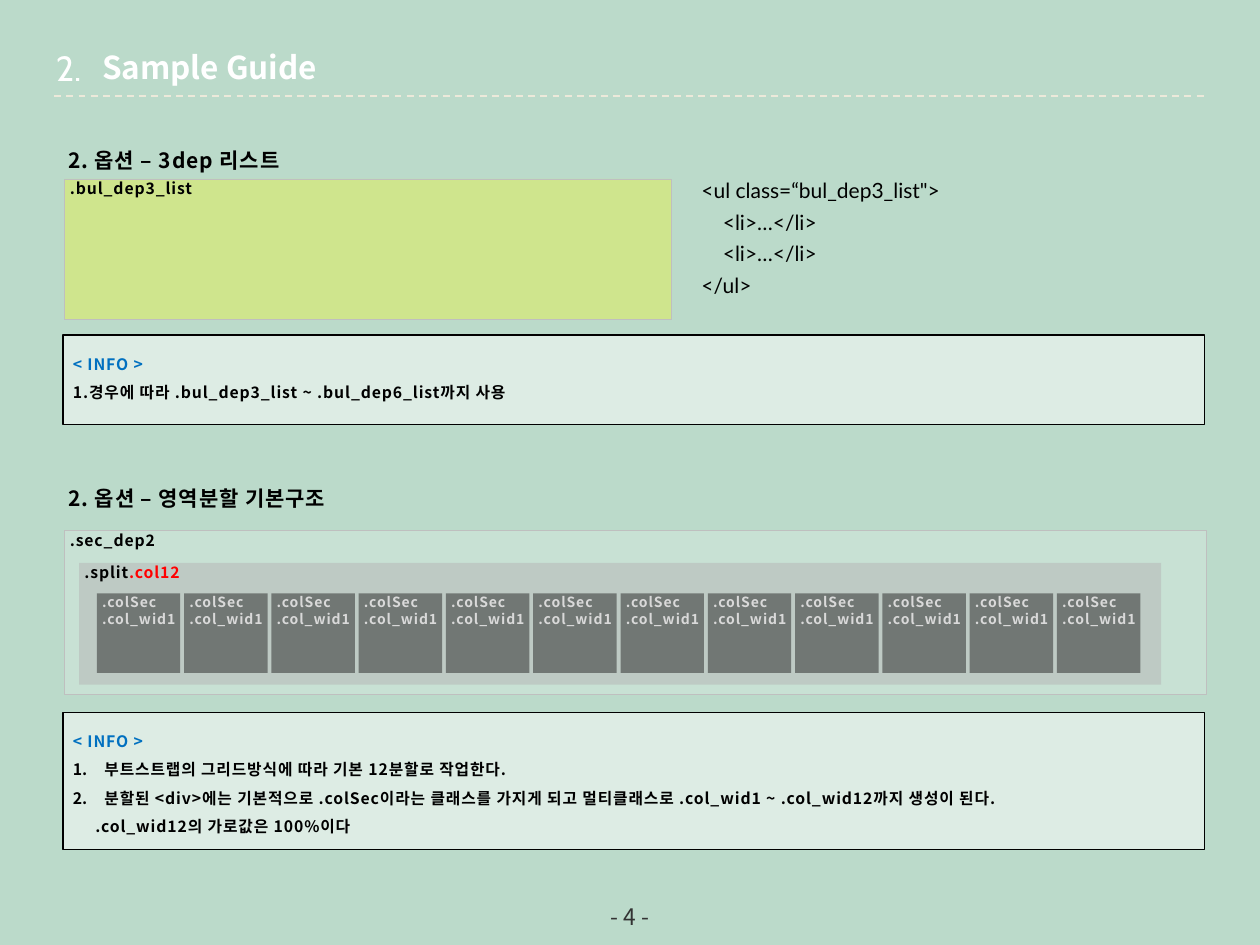
import pptx
import pptx.dml.color
import pptx.enum.dml
import pptx.enum.shapes
import pptx.enum.text
import pptx.oxml.ns
import pptx.util
from lxml import etree

Pt = pptx.util.Pt
ALIGN = pptx.enum.text.PP_ALIGN
ANCHOR = pptx.enum.text.MSO_ANCHOR
KOREAN = "Noto Sans CJK KR"
BLACK, WHITE, GRAY, BLUE, RED = "000000", "FFFFFF", "BFBFBF", "0070C0", "FF0000"
LINE_HEIGHT = 1.2  # line pitch relative to the text size
COLUMNS = 12
COLUMN_PITCH = 49.88


def rgb(color):
    return pptx.dml.color.RGBColor.from_string(color)


def sub(parent, tag, **attrs):
    return etree.SubElement(parent, pptx.oxml.ns.qn(tag), **attrs)


def add_run(p, text, size, color, font=KOREAN, bold=False, spacing=0):
    r = p.add_run()
    r.text = text
    f = r.font
    f.size, f.bold, f.name = Pt(size), bold, font
    f.color.rgb = rgb(color)
    rPr = r._r.get_or_add_rPr()
    sub(rPr, "a:ea", typeface=font)
    if spacing:
        rPr.set("spc", str(int(spacing * 100)))


def add_label(p, text, size, color, lines=1):
    """Add a bold, slightly spaced run and set the line pitch to match it."""
    p.alignment = ALIGN.LEFT
    p.line_spacing = Pt(round(size * LINE_HEIGHT * lines, 1))
    add_run(p, text, size, color, bold=True, spacing=0.5)


def indent(p, left, hanging=0, numbered=False):
    pPr = p._p.get_or_add_pPr()
    pPr.set("marL", str(Pt(left)))
    pPr.set("indent", str(Pt(-hanging)))
    if numbered:
        sub(pPr, "a:buFont", typeface="+mj-lt")
        sub(pPr, "a:buAutoNum", type="arabicPeriod")


def next_paragraph(tf):
    first = tf.paragraphs[0]
    return tf.add_paragraph() if first.runs else first


def set_insets(tf, left, top, right, bottom):
    tf.margin_left, tf.margin_top = Pt(left), Pt(top)
    tf.margin_right, tf.margin_bottom = Pt(right), Pt(bottom)


def add_panel(slide, box, fill, alpha, line=None, line_width=0.25,
              insets=(3, 0, 0, 0)):
    """Add a translucent rectangle and return its text frame."""
    sp = slide.shapes.add_shape(pptx.enum.shapes.MSO_SHAPE.RECTANGLE,
                                *map(Pt, box))
    sp.shadow.inherit = False
    sp.fill.solid()
    sp.fill.fore_color.rgb = rgb(fill)
    color = sp._element.spPr.find(".//" + pptx.oxml.ns.qn("a:srgbClr"))
    sub(color, "a:alpha", val=str(alpha * 1000))
    if line:
        sp.line.color.rgb = rgb(line)
        sp.line.width = Pt(line_width)
    else:
        sp.line.fill.background()
    tf = sp.text_frame
    tf.word_wrap = True
    tf.vertical_anchor = ANCHOR.TOP
    set_insets(tf, *insets)
    return tf


def add_text_box(slide, box, wrap=True):
    tf = slide.shapes.add_textbox(*map(Pt, box)).text_frame
    tf.word_wrap = wrap
    return tf


def add_heading(slide, box, text):
    tf = add_text_box(slide, box, wrap=False)
    tf.auto_size = pptx.enum.text.MSO_AUTO_SIZE.SHAPE_TO_FIT_TEXT
    set_insets(tf, 3, 0, 0, 0)
    add_label(tf.paragraphs[0], text, 12, BLACK, lines=1.5)


def add_info(slide, top, height):
    tf = add_panel(slide, (36, top, 652.3, height), WHITE, 50, BLACK, 0.75,
                   insets=(5.67, 5.67, 5.67, 0))
    add_label(tf.paragraphs[0], "< INFO >", 9, BLUE, lines=1.5)
    return tf


def add_info_line(tf, text, **indents):
    p = next_paragraph(tf)
    if indents:
        indent(p, **indents)
    add_label(p, text, 9, BLACK, lines=1.5)


def add_title(slide):
    sp = slide.shapes.title
    sp.left, sp.top, sp.width, sp.height = map(Pt, (51.1, 23, 331.9, 28.8))
    tf = sp.text_frame
    tf.word_wrap = True
    tf.auto_size = pptx.enum.text.MSO_AUTO_SIZE.NONE
    tf.vertical_anchor = ANCHOR.TOP
    p = tf.paragraphs[0]
    p.alignment = ALIGN.LEFT
    p.line_spacing = Pt(22.5)
    add_run(p, "Sample Guide", 18, WHITE, bold=True)

    p = add_text_box(slide, (19.4, 23, 39.6, 31.7)).paragraphs[0]
    p.alignment = ALIGN.CENTER
    add_run(p, "2.", 20, WHITE, font="Cabin")


def add_title_rule(slide):
    line = slide.shapes.add_connector(
        pptx.enum.shapes.MSO_CONNECTOR.STRAIGHT,
        Pt(31), Pt(54.7), Pt(689), Pt(54.7))
    line.line.color.rgb = rgb("ECE9DA")
    line.line.width = Pt(1)
    line.line.dash_style = pptx.enum.dml.MSO_LINE.DASH
    sub(line._element.spPr, "a:effectLst")


def add_page_number(slide):
    tf = add_text_box(slide, (276, 512.6, 168, 22.3))
    set_insets(tf, 0, 0, 0, 0)
    tf.vertical_anchor = ANCHOR.MIDDLE
    p = tf.paragraphs[0]
    p.alignment = ALIGN.CENTER
    add_run(p, "- 4 -", 13, "333333")


def add_code(slide, box, lines):
    tf = add_text_box(slide, box)
    for text in lines:
        p = next_paragraph(tf)
        p.line_spacing = Pt(18)
        add_run(p, text, 12, BLACK, font="Lato")


def add_list_section(slide):
    add_heading(slide, (36, 77, 133.9, 21.6), "2. 옵션 – 3dep 리스트")
    tf = add_panel(slide, (36.9, 102.2, 346.6, 80.2), "FFFF00", 30, GRAY)
    add_label(tf.paragraphs[0], ".bul_dep3_list", 9, BLACK)
    add_code(slide, (393.8, 94.3, 277.9, 79.9), [
        "<ul class=“bul_dep3_list\">",
        "    <li>…</li>",
        "    <li>…</li>",
        "</ul>",
    ])
    info = add_info(slide, 191.5, 51.1)
    add_info_line(info, "1.경우에 따라 .bul_dep3_list ~ .bul_dep6_list까지 사용")


def add_split_section(slide):
    add_heading(slide, (36, 270, 166.3, 21.6), "2. 옵션 – 영역분할 기본구조")
    tf = add_panel(slide, (36.9, 303.1, 652.3, 93.6), WHITE, 20, GRAY)
    add_label(tf.paragraphs[0], ".sec_dep2", 9, BLACK)
    tf = add_panel(slide, (45.2, 321.6, 618.3, 69.6), "B5B5B5", 50)
    add_label(tf.paragraphs[0], ".split", 9, BLACK)
    add_label(tf.paragraphs[0], ".col12", 9, RED)
    for i in range(COLUMNS):
        left = 55.3 + i * COLUMN_PITCH
        tf = add_panel(slide, (left, 339.1, 47.7, 45.4), "262626", 50)
        for name in (".colSec", ".col_wid1"):
            add_label(next_paragraph(tf), name, 8, "D9D9D9")
    info = add_info(slide, 407, 78.5)
    for text in (
        "부트스트랩의 그리드방식에 따라 기본 12분할로 작업한다.",
        "분할된 <div>에는 기본적으로 .colSec이라는 클래스를 가지게 되고 "
        "멀티클래스로 .col_wid1 ~ .col_wid12까지 생성이 된다.",
    ):
        add_info_line(info, text, left=18, hanging=18, numbered=True)
    add_info_line(info, ".col_wid12의 가로값은 100%이다", left=12.8)


def main():
    prs = pptx.Presentation()
    prs.slide_width, prs.slide_height = Pt(720), Pt(540)
    slide = prs.slides.add_slide(prs.slide_layouts.get_by_name("Title Only"))
    slide.background.fill.solid()
    slide.background.fill.fore_color.rgb = rgb("BBDACA")
    add_page_number(slide)
    add_title_rule(slide)
    add_title(slide)
    add_list_section(slide)
    add_split_section(slide)
    prs.save("out.pptx")


if __name__ == "__main__":
    main()
